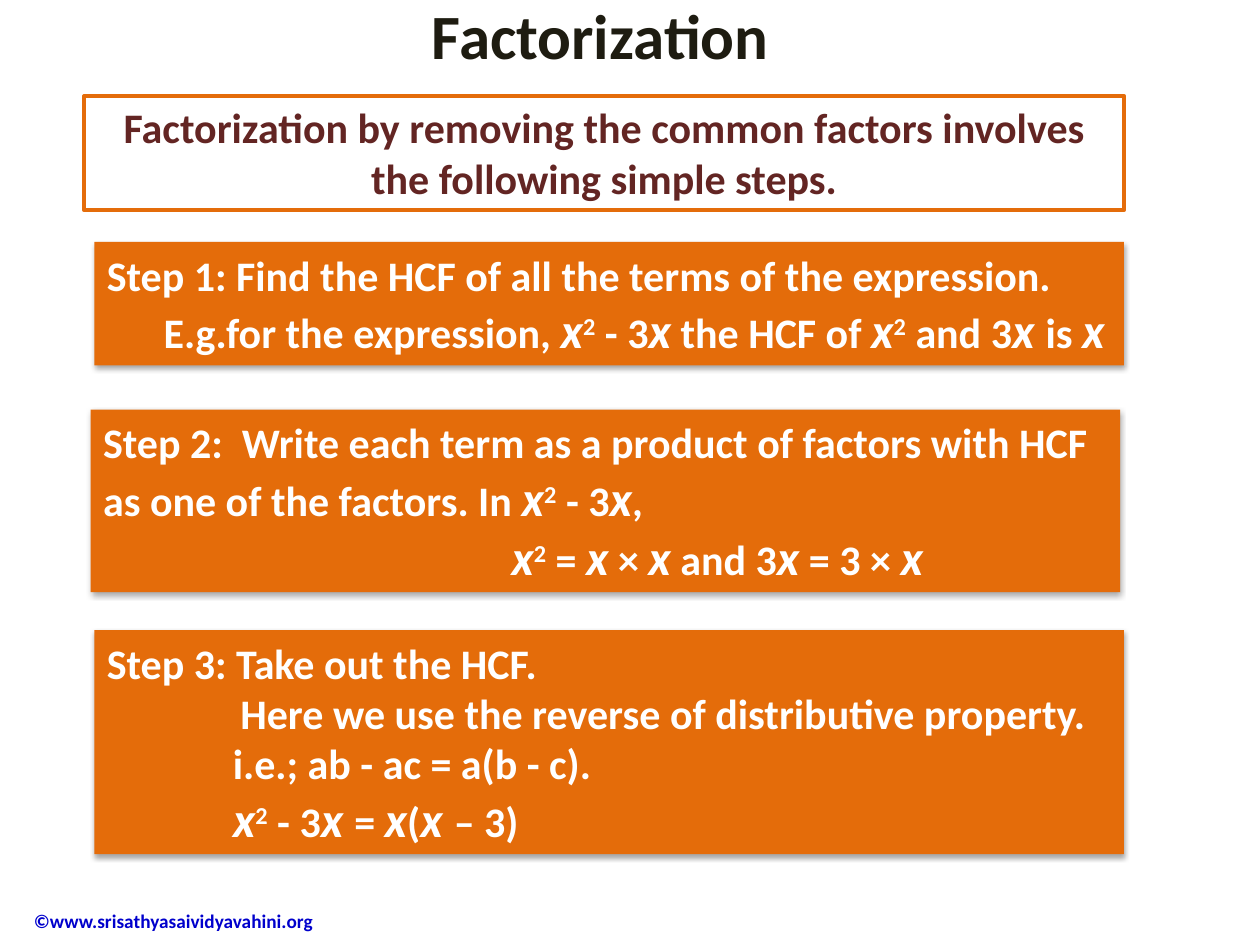
from lxml import etree
from pptx import Presentation
from pptx.dml.color import RGBColor
from pptx.enum.shapes import MSO_SHAPE
from pptx.enum.text import MSO_ANCHOR as ANCHOR, PP_ALIGN as ALIGN
from pptx.oxml.ns import qn
from pptx.util import Inches, Pt

COLORS = {
    "title": "1E1C11",
    "intro": "632523",
    "orange": "E46C0A",
    "step": "FFFFFF",
    "credit": "0000CC",
    "shadow": "000000",
}

# Each paragraph: left margin, first-line indent, text.
# "|" parts the text: a lone x is a variable, a lone 2 an exponent, "\n" a line break.
STEPS = [
    (0.75, 1.92, 0.98, [
        (0, 0, "Step 1: Find the HCF of all the terms of the expression."),
        (0.45, 0, "E.g.for the expression, |x|2| - 3|x| the HCF of |x|2| and 3|x |is |x"),
    ]),
    (0.72, 3.25, 1.45, [
        (0, 0, "Step 2:  Write each term as a product of factors with HCF "
               "as one of the factors. In |x|2| - 3|x|,"),
        (3.24, 0, "x|2| = |x| × |x| and 3|x| = 3 × |x"),
    ]),
    (0.75, 5, 1.78, [
        (1, -1, "Step 3: Take out the HCF."),
        (1, 0.06, "Here we use the reverse of distributive property.|\n|"
                  "i.e.; ab - ac = a(b - c)."),
        (1, 0, "x|2| - 3|x |= |x|(|x |– 3)"),
    ]),
]


def rgb(name):
    return RGBColor.from_string(COLORS[name])


def set_indent(paragraph, margin, first):
    properties = paragraph._p.get_or_add_pPr()
    properties.set("marL", str(Inches(margin)))
    properties.set("indent", str(Inches(first)))


def add_run(paragraph, text, size, color):
    run = paragraph.add_run()
    run.text = text
    is_variable = text.strip() == "x"
    formats = {
        "name": "Calibri",
        "size": Pt(28 if is_variable else size),
        "bold": True,
        "italic": is_variable,
    }
    for attribute, value in formats.items():
        setattr(run.font, attribute, value)
    run.font.color.rgb = rgb(color)
    if text == "2":
        run._r.get_or_add_rPr().set("baseline", "30000")


def write(shape, paragraphs, size, color, align=ALIGN.LEFT, anchor=ANCHOR.TOP, wrap=True):
    frame = shape.text_frame
    frame.word_wrap = wrap
    frame.vertical_anchor = anchor
    for number, (margin, first, text) in enumerate(paragraphs):
        paragraph = frame.add_paragraph() if number else frame.paragraphs[0]
        paragraph.alignment = align
        set_indent(paragraph, margin, first)
        for part in text.split("|"):
            if part == "\n":
                paragraph.add_line_break()
            else:
                add_run(paragraph, part, size, color)


def add_label(slide, box, text, size, color, margin=0, **layout):
    label = slide.shapes.add_textbox(*map(Inches, box))
    write(label, [(margin, 0, text)], size, color, **layout)


def add_box(slide, box):
    rectangle = slide.shapes.add_shape(MSO_SHAPE.RECTANGLE, *map(Inches, box))
    rectangle.shadow.inherit = False
    return rectangle


def add_shadow(shape):
    effects = shape._element.spPr.find(qn("a:effectLst"))
    outer = etree.SubElement(effects, qn("a:outerShdw"), blurRad=str(Pt(3.1)),
                             dist=str(Pt(1.8)), dir="5400000", rotWithShape="0")
    tint = etree.SubElement(outer, qn("a:srgbClr"), val=COLORS["shadow"])
    etree.SubElement(tint, qn("a:alpha"), val="35000")


def add_intro(slide, box, text):
    intro = add_box(slide, box)
    intro.fill.background()
    intro.line.color.rgb = rgb("orange")
    intro.line.width = Pt(2.25)
    write(intro, [(0, 0, text)], 24, "intro", align=ALIGN.CENTER)


def add_step(slide, left, top, height, paragraphs):
    step = add_box(slide, (left, top, 8.17, height))
    step.fill.solid()
    step.fill.fore_color.rgb = rgb("orange")
    step.line.fill.background()
    add_shadow(step)
    write(step, paragraphs, 24, "step", anchor=ANCHOR.MIDDLE)


def main():
    deck = Presentation()
    deck.slide_width, deck.slide_height = Inches(10), Inches(7.5)
    slide = deck.slides.add_slide(deck.slide_layouts[6])

    add_label(slide, (-0.33, 7.1, 3.02, 0.41), "©www.srisathyasaividyavahini.org",
              11, "credit", margin=0.5, anchor=ANCHOR.MIDDLE)
    add_label(slide, (3.33, -0.08, 2.91, 0.71), "Factorization", 36, "title", wrap=False)
    add_intro(slide, (0.67, 0.76, 8.25, 0.91),
              "Factorization by removing the common factors involves "
              "the following simple steps.")
    for step in STEPS:
        add_step(slide, *step)

    deck.save("out.pptx")


if __name__ == "__main__":
    main()
